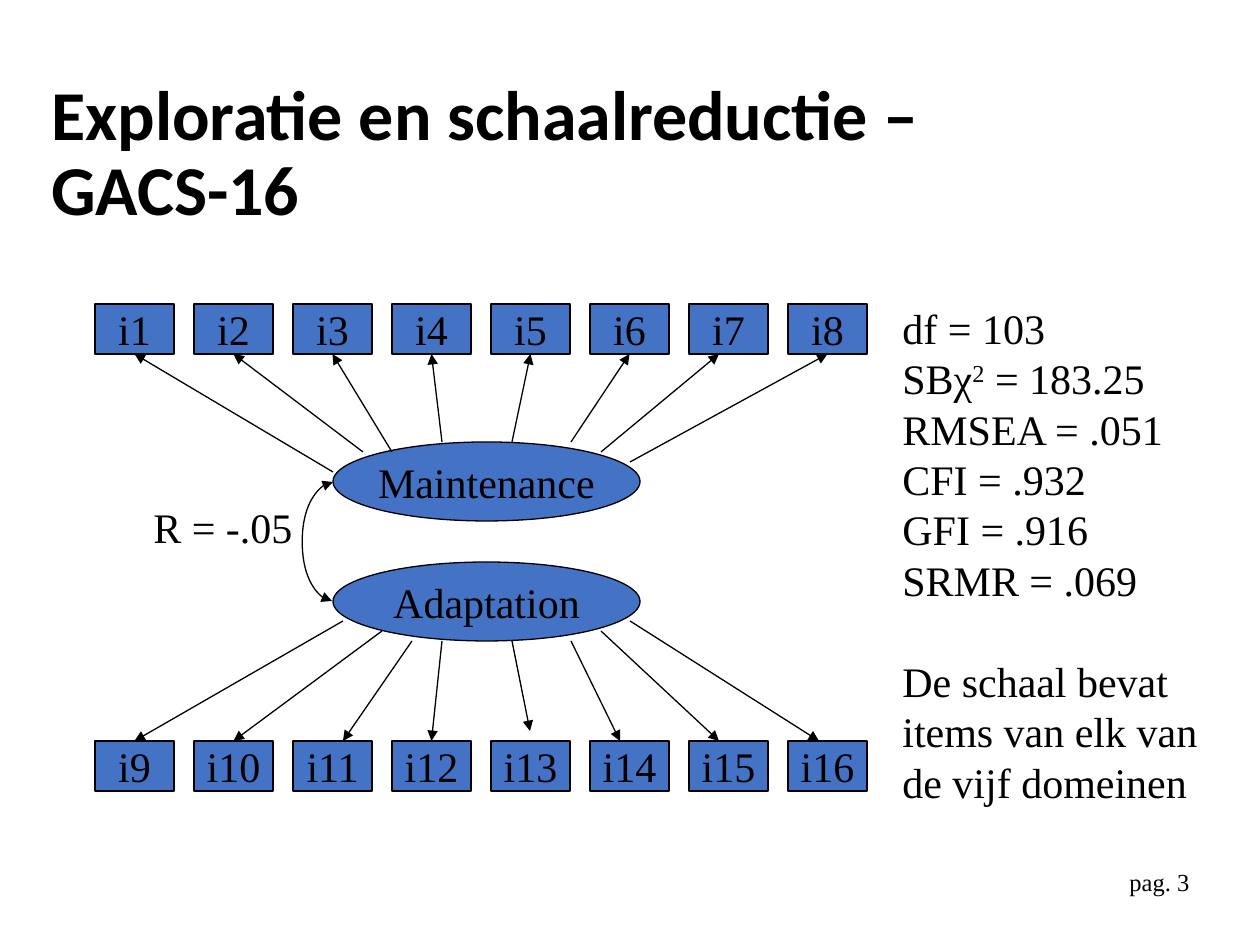
import pptx
import pptx.dml.color
import pptx.enum.shapes
import pptx.enum.text
import pptx.oxml
import pptx.oxml.ns
import pptx.util

PX = 914400 / 126
SERIF = "Times New Roman"
SHAPE = pptx.enum.shapes.MSO_SHAPE
LINE = pptx.enum.shapes.MSO_CONNECTOR
ALIGN = pptx.enum.text.PP_ALIGN
ANCHOR = pptx.enum.text.MSO_ANCHOR


def emu(px):
    """Turn px into EMU."""
    return round(px * PX)


def color(value):
    """Turn a hex string into a colour."""
    return pptx.dml.color.RGBColor.from_string(value)


class Diagram:
    """Style and current slide, with one method per kind of element."""

    ink = "000000"
    fill = "4472C4"
    line_width = pptx.util.Pt(0.75)

    def __init__(self, slide):
        """Keep the slide to draw on."""
        self.slide = slide

    def style(self, p, size, font=SERIF, bold=False, align=ALIGN.LEFT):
        """Set the font and alignment of a paragraph."""
        p.font.size = pptx.util.Pt(size)
        p.font.name = font
        p.font.bold = bold
        p.font.color.rgb = color(self.ink)
        p.alignment = align

    def text(self, box, paragraphs, size=24, wrap=True, anchor=ANCHOR.TOP, **style):
        """Add a text box whose paragraphs are strings and return its frame."""
        tf = self.slide.shapes.add_textbox(*map(emu, box)).text_frame
        tf.word_wrap = wrap
        tf.vertical_anchor = anchor
        for i, content in enumerate(paragraphs):
            p = tf.add_paragraph() if i else tf.paragraphs[0]
            p.text = content
            self.style(p, size, **style)
        return tf

    def node(self, kind, box, label):
        """Add a filled, outlined shape with a centred label."""
        sp = self.slide.shapes.add_shape(kind, *map(emu, box))
        sp.shadow.inherit = False
        sp.fill.solid()
        sp.fill.fore_color.rgb = color(self.fill)
        sp.line.color.rgb = color(self.ink)
        sp.line.width = self.line_width
        tf = sp.text_frame
        tf.word_wrap = False
        tf.vertical_anchor = ANCHOR.MIDDLE
        tf.paragraphs[0].text = label
        self.style(tf.paragraphs[0], 24, align=ALIGN.CENTER)
        return sp

    def connector(self, kind, start, end, heads=("tailEnd",)):
        """Add a connector with triangle heads."""
        cxn = self.slide.shapes.add_connector(kind, *map(emu, start + end))
        cxn.line.color.rgb = color(self.ink)
        cxn.line.width = self.line_width
        ln = cxn.line._get_or_add_ln()
        for head in heads:
            pptx.oxml.ns.qn("a:" + head)
            ln.append(pptx.oxml.parse_xml(
                f'<a:{head} {pptx.oxml.ns.nsdecls("a")} type="triangle"/>'))
        cxn._element.spPr.append(pptx.oxml.parse_xml(
            f'<a:effectLst {pptx.oxml.ns.nsdecls("a")}/>'))
        return cxn

    def arrow(self, start, end, item, side):
        """Add an arrow to a point, or to the middle of an item's side."""
        cxn = self.connector(LINE.STRAIGHT, start, end or start)
        if end is None:
            cxn.end_connect(item, side)

    def curve(self, start, end, bulge):
        """Add a two-headed curve that bulges to the left."""
        cxn = self.connector(LINE.CURVE, start, end, ("headEnd", "tailEnd"))
        adjust = -100000 * bulge // (end[0] - start[0])
        geom = cxn._element.spPr.find(pptx.oxml.ns.qn("a:prstGeom"))
        guides = geom.find(pptx.oxml.ns.qn("a:avLst"))
        guides.append(pptx.oxml.parse_xml(
            f'<a:gd {pptx.oxml.ns.nsdecls("a")} name="adj1" fmla="val {adjust}"/>'))


FACTORS = [
    ("Maintenance", 442, 304, 1, 2, [
        ((333, 472), None), ((363, 452), None), ((392, 452), None),
        ((442, 442), None), ((512, 442), None), ((571, 442), None),
        ((601, 452), (719, 354)), ((630, 462), None)]),
    ("Adaptation", 562, 741, 9, 0, [
        ((343, 621), None), ((382, 631), None), ((412, 641), (343, 741)),
        ((442, 641), None), ((512, 641), (530, 731)), ((571, 641), (620, 741)),
        ((601, 631), (719, 741)), ((630, 621), (819, 741))]),
]


def main():
    """Build the slide and save it."""
    prs = pptx.Presentation()
    prs.slide_width, prs.slide_height = emu(1260), emu(945)
    d = Diagram(prs.slides.add_slide(prs.slide_layouts[6]))

    d.text((903, 861, 305, 63), ["pag. 3 "], 14, align=ALIGN.RIGHT)
    tf = d.text((39, 108, 1187, 95), ["Exploratie en schaalreductie –\vGACS-16"], 40,
                anchor=ANCHOR.MIDDLE, font="Calibri", bold=True)
    tf.paragraphs[0].line_spacing = 0.9

    for name, top, item_top, first, side, arrows in FACTORS:
        d.node(SHAPE.OVAL, (333, top, 307, 79), name)
        for i, (start, end) in enumerate(arrows):
            item = d.node(SHAPE.RECTANGLE, (95 + 99 * i, item_top, 79, 50), f"i{first + i}")
            d.arrow(start, end, item, side)

    d.curve((332, 601), (333, 482), 30)
    d.text((141, 495, 165, 63), ["R = -.05"], wrap=False)

    tf = d.text((890, 296, 345, 572), [
        "df = 103", "SBχ", "RMSEA = .051", "CFI = .932", "GFI = .916", "SRMR = .069",
        "De schaal bevat items van elk van de vijf domeinen"])
    p = tf.paragraphs[1]
    r = p.add_run()
    r.text = "2"
    r.font._element.set("baseline", "30000")
    p.add_run().text = " = 183.25"
    tf.paragraphs[-1].space_before = pptx.util.Pt(29)
    prs.save("out.pptx")


if __name__ == "__main__":
    main()
